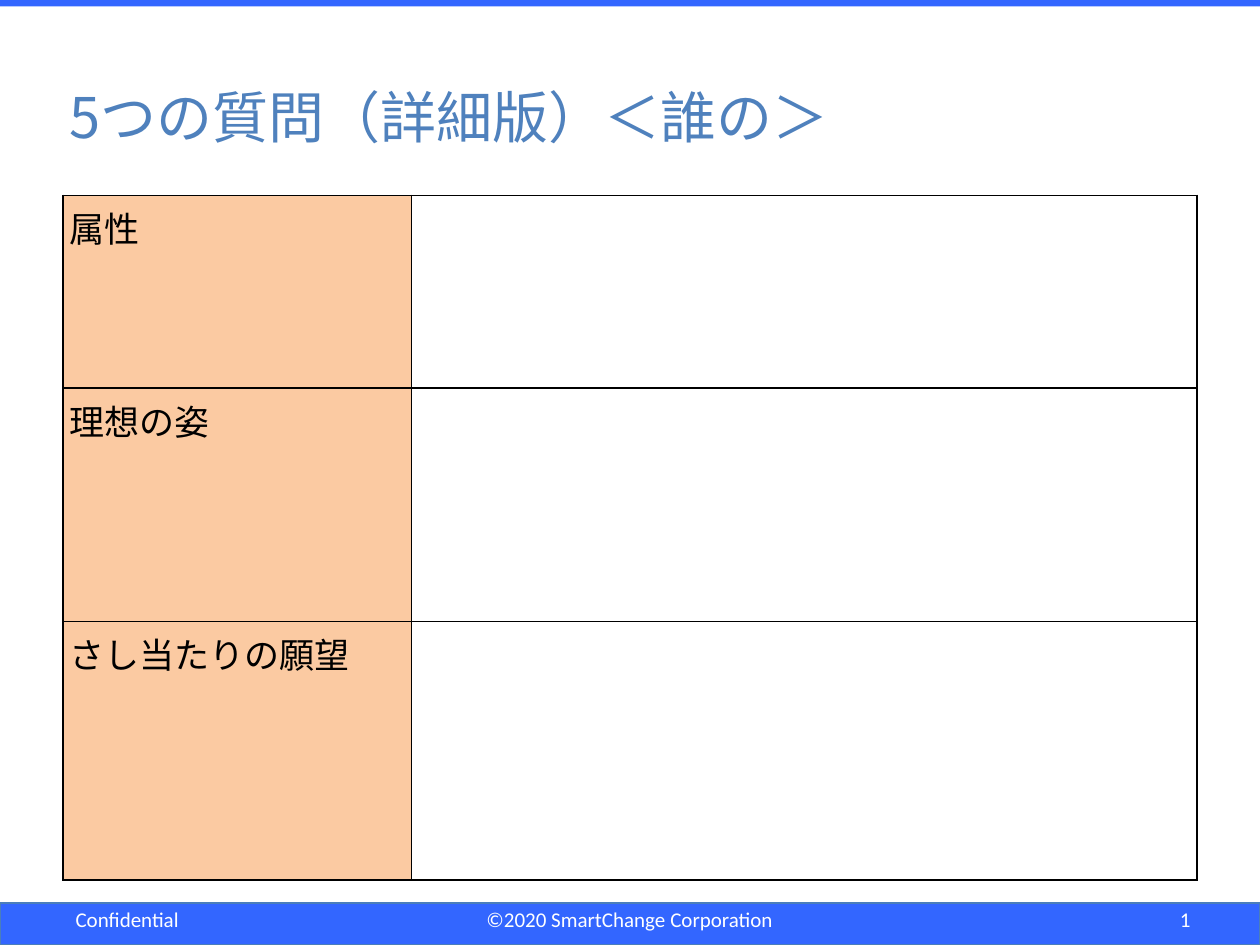
"""Build the worksheet slide on whose wish is being answered."""
from dataclasses import dataclass

import lxml.etree
import pptx
import pptx.dml.color
import pptx.enum.shapes
import pptx.enum.text
import pptx.oxml.ns
import pptx.util

Pt = pptx.util.Pt
ALIGN = pptx.enum.text.PP_ALIGN
ANCHOR = pptx.enum.text.MSO_ANCHOR


@dataclass(frozen=True)
class Theme:
    """Colours, fonts, type sizes and the text inset."""
    bar: str = "3366FF"
    bar_line: str = "4A7EBB"
    title: str = "4F81BD"
    label_fill: str = "FBCAA2"
    white: str = "FFFFFF"
    black: str = "000000"
    latin_font: str = "Calibri"
    japanese_font: str = "Noto Sans CJK JP"
    title_size: float = 32
    label_size: float = 20
    footer_size: float = 12
    inset: float = 3.6


THEME = Theme()


def rgb(value):
    """Turn a hex string into a colour."""
    return pptx.dml.color.RGBColor.from_string(value)


def write_text(frame, text, *, size, color, font, align=ALIGN.LEFT):
    """Write one formatted paragraph into a text frame."""
    paragraph = frame.paragraphs[0]
    paragraph.alignment = align
    run = paragraph.add_run()
    run.text = text
    run.font.size = Pt(size)
    run.font.name = font
    run.font.color.rgb = rgb(color)
    east_asian = lxml.etree.SubElement(run.font._element, pptx.oxml.ns.qn("a:ea"))
    east_asian.set("typeface", font)


def set_margins(target):
    """Give a text frame or a cell the theme inset on every side."""
    for side in ("left", "top", "right", "bottom"):
        setattr(target, f"margin_{side}", Pt(THEME.inset))


def add_text(slide, box, text, *, wrap=True, **text_format):
    """Add a text box, centred vertically, in the given box."""
    shape = slide.shapes.add_textbox(*map(Pt, box))
    frame = shape.text_frame
    set_margins(frame)
    frame.word_wrap = wrap
    frame.vertical_anchor = ANCHOR.MIDDLE
    write_text(frame, text, **text_format)


def add_bar(slide, box, line=None):
    """Add a coloured band in the given box."""
    shape = slide.shapes.add_shape(
        pptx.enum.shapes.MSO_SHAPE.RECTANGLE, *map(Pt, box))
    shape.shadow.inherit = False
    shape.fill.solid()
    shape.fill.fore_color.rgb = rgb(THEME.bar)
    if line:
        shape.line.color.rgb = rgb(line)
        shape.line.width = Pt(0.75)
    else:
        shape.line.fill.background()


def add_footer(slide, box):
    """Add the bottom band with its notice, copyright and page number."""
    left, top, width, height = box
    add_bar(slide, box, line=THEME.bar_line)
    text_top, text_height = top - 1.2, 21
    entries = (
        ("Confidential", 39.6, 160.6, ALIGN.LEFT, True),
        ("©︎2020 SmartChange Corporation", 207.4, 304.6, ALIGN.CENTER, True),
        ("1", width - 50.4, 14.4, ALIGN.RIGHT, False),
    )
    for text, offset, text_width, align, wrap in entries:
        add_text(slide, (left + offset, text_top, text_width, text_height), text,
                 size=THEME.footer_size, color=THEME.white,
                 font=THEME.latin_font, align=align, wrap=wrap)


def style_cell(cell, fill):
    """Fill a cell, set its margins and draw its four borders."""
    set_margins(cell)
    properties = cell._tc.get_or_add_tcPr()
    for tag in ("a:lnL", "a:lnR", "a:lnT", "a:lnB"):
        border = lxml.etree.SubElement(properties, pptx.oxml.ns.qn(tag), w=str(Pt(1)))
        solid = lxml.etree.SubElement(border, pptx.oxml.ns.qn("a:solidFill"))
        lxml.etree.SubElement(solid, pptx.oxml.ns.qn("a:srgbClr"), val=THEME.black)
    cell.fill.solid()
    cell.fill.fore_color.rgb = rgb(fill)


def add_worksheet(slide, box, labels, row_heights, label_width):
    """Add a table with labels on the left and room for answers on the right."""
    table = slide.shapes.add_table(len(labels), 2, *map(Pt, box)).table
    table.first_row = table.horz_banding = False
    table.columns[0].width = Pt(label_width)
    table.columns[1].width = Pt(box[2] - label_width)
    for row, label, height in zip(table.rows, labels, row_heights):
        row.height = Pt(height)
        label_cell, answer_cell = row.cells
        style_cell(label_cell, THEME.label_fill)
        style_cell(answer_cell, THEME.white)
        write_text(label_cell.text_frame, label, size=THEME.label_size,
                   color=THEME.black, font=THEME.japanese_font)


def main():
    """Build the slide and save it."""
    presentation = pptx.Presentation()
    presentation.slide_width, presentation.slide_height = Pt(720), Pt(540)
    slide = presentation.slides.add_slide(presentation.slide_layouts[6])
    add_bar(slide, (0, 0, 720, 3.6))
    add_text(slide, (36, 21.6, 648, 90), "5つの質問（詳細版）＜誰の＞",
             size=THEME.title_size, color=THEME.title, font=THEME.japanese_font)
    row_heights = (110.2, 133.4, 147.8)
    add_worksheet(slide, (36, 111.6, 648, sum(row_heights)),
                  ("属性", "理想の姿", "さし当たりの願望"), row_heights, 199.2)
    add_footer(slide, (0, 516, 720, 24))
    presentation.save("out.pptx")


if __name__ == "__main__":
    main()
